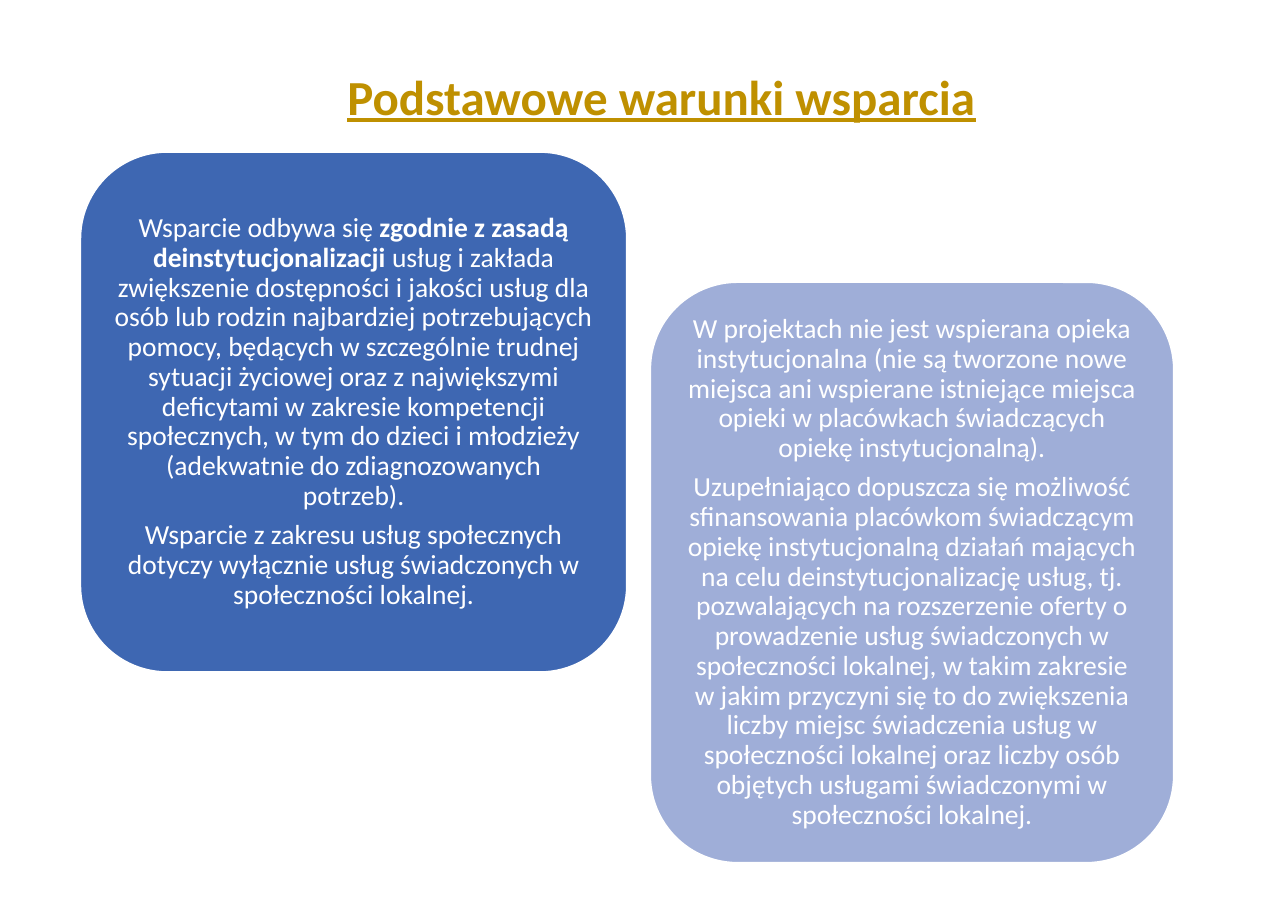
from pptx import Presentation
from pptx.dml.color import RGBColor
from pptx.enum.shapes import MSO_SHAPE
from pptx.enum.text import MSO_ANCHOR, PP_ALIGN
from pptx.util import Pt

ROUND = MSO_SHAPE.ROUNDED_RECTANGLE
MIDDLE, BOTTOM = MSO_ANCHOR.MIDDLE, MSO_ANCHOR.BOTTOM
CENTER = PP_ALIGN.CENTER

BODY = {"name": "Calibri", "size": Pt(18)}
HEAD = {"name": "Calibri", "size": Pt(32), "bold": True, "underline": True}

# Each paragraph is a list of (text, bold) runs
RULES = [
    [("Wsparcie odbywa się ", False),
     ("zgodnie z zasadą deinstytucjonalizacji ", True),
     ("usług i zakłada zwiększenie dostępności i jakości usług dla osób lub "
      "rodzin najbardziej potrzebujących pomocy, będących w szczególnie trudnej "
      "sytuacji życiowej oraz z największymi deficytami w zakresie kompetencji "
      "społecznych, w tym do dzieci i młodzieży (adekwatnie do zdiagnozowanych "
      "potrzeb).", False)],
    [("Wsparcie z zakresu usług społecznych dotyczy wyłącznie usług "
      "świadczonych w społeczności lokalnej.", False)],
]
LIMITS = [
    [("W projektach nie jest wspierana opieka instytucjonalna (nie są tworzone "
      "nowe miejsca ani wspierane istniejące miejsca opieki w placówkach "
      "świadczących opiekę instytucjonalną).", False)],
    [("Uzupełniająco dopuszcza się możliwość sfinansowania placówkom "
      "świadczącym opiekę instytucjonalną działań mających na celu "
      "deinstytucjonalizację usług, tj. pozwalających na rozszerzenie oferty o "
      "prowadzenie usług świadczonych w społeczności lokalnej, w takim zakresie "
      "w jakim przyczyni się to do zwiększenia liczby miejsc świadczenia usług "
      "w społeczności lokalnej oraz liczby osób objętych usługami świadczonymi "
      "w społeczności lokalnej.", False)],
]


def color(code):
    return RGBColor.from_string(code)


def style(item, values):
    for key, value in values.items():
        setattr(item, key, value)


def add_title(slide, box, text):
    frame = slide.shapes.add_textbox(*map(Pt, box)).text_frame
    style(frame, {"word_wrap": True, "vertical_anchor": BOTTOM})
    para = frame.paragraphs[0]
    style(para, {"alignment": CENTER, "line_spacing": 0.9})
    run = para.add_run()
    run.text = text
    style(run.font, HEAD)
    run.font.color.rgb = color("BF9000")


def add_card(slide, box, fill, paras):
    # Rounded panel
    card = slide.shapes.add_shape(ROUND, *map(Pt, box))
    card.shadow.inherit = False
    card.fill.solid()
    card.fill.fore_color.rgb = color(fill)
    card.line.color.rgb = color("FFFFFF")
    card.line.width = Pt(1)

    # Centred text inside it
    frame = card.text_frame
    style(frame, {"word_wrap": True, "vertical_anchor": MIDDLE})
    for side in ("left", "top", "right", "bottom"):
        setattr(frame, f"margin_{side}", Pt(5))
    for i, runs in enumerate(paras):
        para = frame.add_paragraph() if i else frame.paragraphs[0]
        style(para, {"alignment": CENTER, "line_spacing": 0.9,
                     "space_after": Pt(6.3)})
        for text, bold in runs:
            run = para.add_run()
            run.text = text
            style(run.font, {**BODY, "bold": bold})
            run.font.color.rgb = color("FFFFFF")


def main():
    deck = Presentation()
    style(deck, {"slide_width": Pt(841.68), "slide_height": Pt(595.44)})
    slide = deck.slides.add_slide(deck.slide_layouts[6])
    add_card(slide, (52.6, 99.4, 357, 339.8), "3E67B2", RULES)
    add_card(slide, (425, 184.5, 342, 379.4), "9FAED8", LIMITS)
    add_title(slide, (149, 48.2, 566.6, 37.5), "Podstawowe warunki wsparcia")
    deck.save("out.pptx")


if __name__ == "__main__":
    main()
